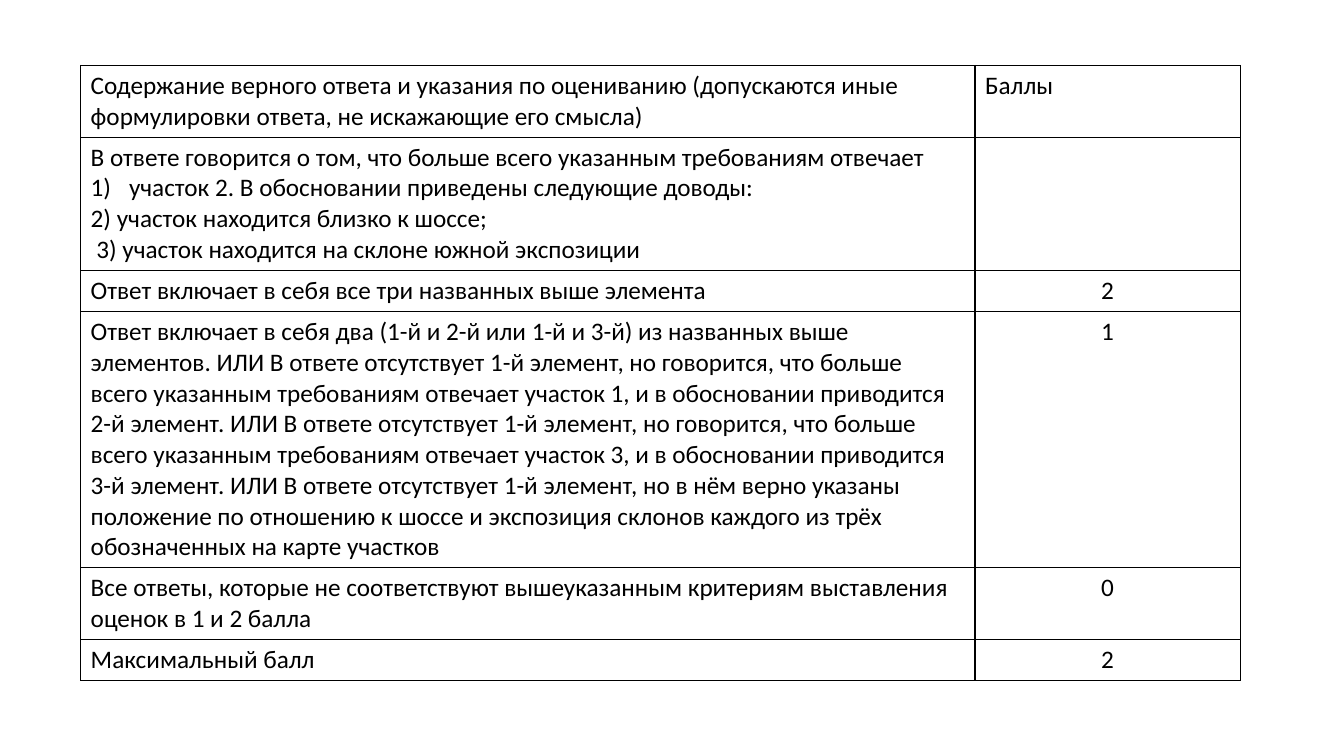
from dataclasses import dataclass

from lxml.etree import SubElement
from pptx import Presentation
from pptx.dml.color import RGBColor
from pptx.enum.text import PP_ALIGN as Align
from pptx.oxml.ns import qn
from pptx.table import Table, _Cell as Cell
from pptx.util import Inches, Pt

BLACK = RGBColor(0x00, 0x00, 0x00)
FONT = "Calibri"
SIZE = Pt(18)
EDGE = Pt(1)
INDENT = Inches(0.38)
WIDTHS = (8.87, 2.63)
ROW = 0.41


@dataclass
class Rule:
    text: str
    score: str
    align: Align = Align.CENTER
    item: int | None = None  # index of the auto-numbered paragraph


RULES = [
    Rule("Содержание верного ответа и указания по оцениванию (допускаются иные "
         "формулировки ответа, не искажающие его смысла)", "Баллы", Align.LEFT),
    Rule("В ответе говорится о том, что больше всего указанным требованиям отвечает\n"
         "участок 2. В обосновании приведены следующие доводы:\n"
         "2) участок находится близко к шоссе;\n"
         " 3) участок находится на склоне южной экспозиции", "", Align.LEFT, 1),
    Rule("Ответ включает в себя все три названных выше элемента", "2"),
    Rule("Ответ включает в себя два (1-й и 2-й или 1-й и 3-й) из названных выше "
         "элементов. ИЛИ В ответе отсутствует 1-й элемент, но говорится, что больше "
         "всего указанным требованиям отвечает участок 1, и в обосновании приводится "
         "2-й элемент. ИЛИ В ответе отсутствует 1-й элемент, но говорится, что больше "
         "всего указанным требованиям отвечает участок 3, и в обосновании приводится "
         "3-й элемент. ИЛИ В ответе отсутствует 1-й элемент, но в нём верно указаны "
         "положение по отношению к шоссе и экспозиция склонов каждого из трёх "
         "обозначенных на карте участков", "1"),
    Rule("Все ответы, которые не соответствуют вышеуказанным критериям выставления "
         "оценок в 1 и 2 балла", "0"),
    Rule("Максимальный балл", "2"),
]


def add_edges(cell: Cell) -> None:
    """Outline all four sides; the schema wants the lines before the fill."""
    props = cell._tc.get_or_add_tcPr()
    for side in ("a:lnL", "a:lnR", "a:lnT", "a:lnB"):
        line = SubElement(props, qn(side), w=str(EDGE))
        fill = SubElement(line, qn("a:solidFill"))
        SubElement(fill, qn("a:srgbClr"), val=str(BLACK))


def add_number(para) -> None:
    """Give the paragraph an automatic number with a hanging indent."""
    props = para._p.get_or_add_pPr()
    props.set("marL", str(INDENT))
    props.set("indent", str(-INDENT))
    SubElement(props, qn("a:buFont"), typeface="+mj-lt")
    SubElement(props, qn("a:buAutoNum"), type="arabicParenR")


def fill_cell(cell: Cell, text: str, align: Align) -> None:
    add_edges(cell)
    cell.fill.background()
    cell.text_frame.text = text
    for para in cell.text_frame.paragraphs:
        para.alignment = align
        for run in para.runs:
            run.font.name = FONT
            run.font.size = SIZE
            run.font.color.rgb = BLACK


def fill_table(table: Table) -> None:
    table.first_row = table.horz_banding = False
    for col, width in zip(table.columns, WIDTHS):
        col.width = Inches(width)
    for i, rule in enumerate(RULES):
        table.rows[i].height = Inches(ROW)  # rows grow to fit their text
        fill_cell(table.cell(i, 0), rule.text, Align.LEFT)
        fill_cell(table.cell(i, 1), rule.score, rule.align)
        if rule.item is not None:
            add_number(table.cell(i, 0).text_frame.paragraphs[rule.item])


def main() -> None:
    deck = Presentation()
    deck.slide_width, deck.slide_height = Inches(13.33), Inches(7.5)
    slide = deck.slides.add_slide(deck.slide_layouts[6])
    height = Inches(6.01)
    frame = slide.shapes.add_table(len(RULES), len(WIDTHS), Inches(0.8),
                                   Inches(0.65), Inches(sum(WIDTHS)), height)
    fill_table(frame.table)
    frame.height = height
    deck.save("out.pptx")


if __name__ == "__main__":
    main()
